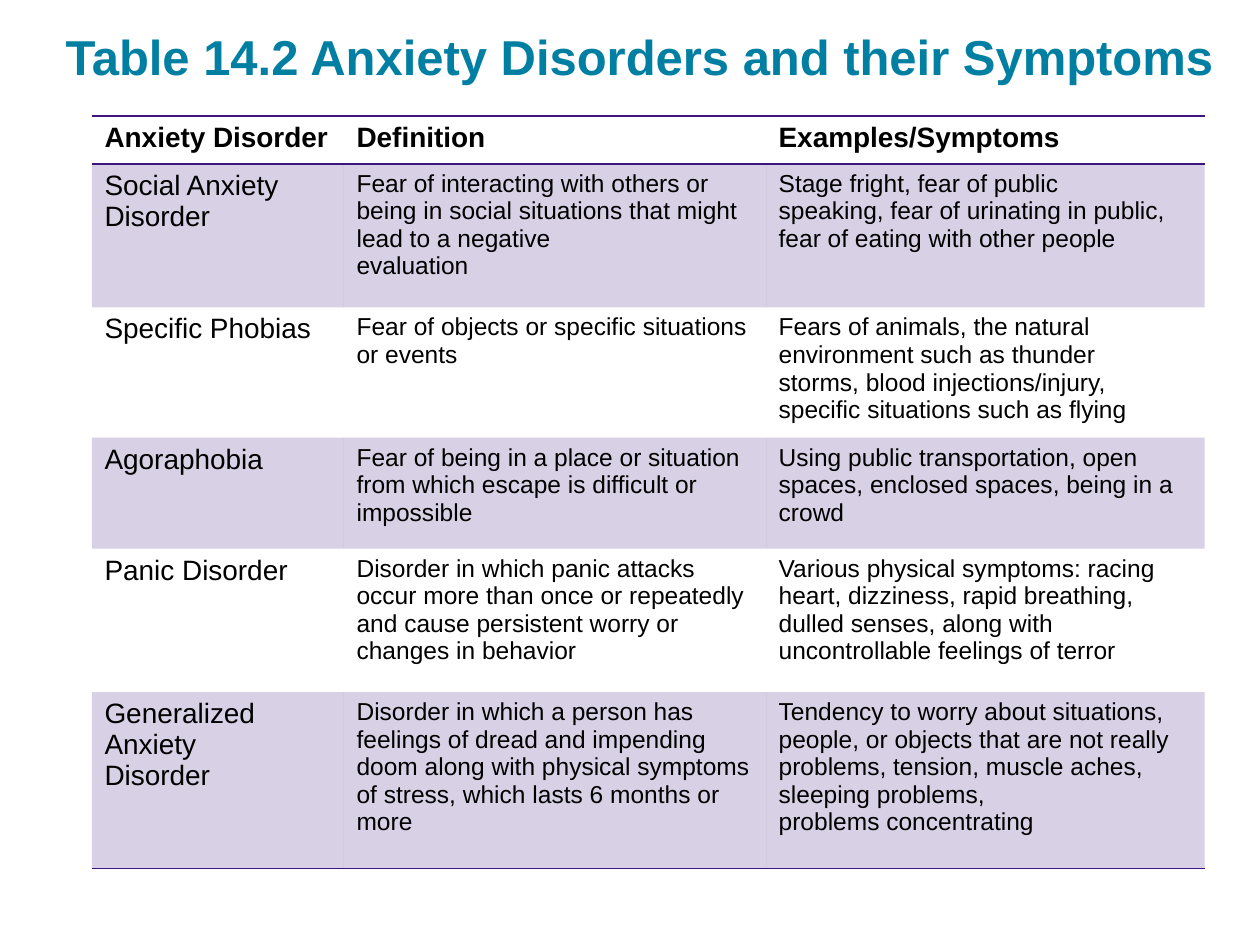
from pptx import Presentation
from pptx.dml.color import RGBColor
from pptx.enum.text import MSO_ANCHOR
from pptx.oxml import parse_xml
from pptx.oxml.ns import nsdecls, qn
from pptx.util import Inches, Pt

FONT = "Arial"
TEAL, PURPLE, BLACK = "007FA3", "3C1581", "000000"
BAND_ALPHA = 20
NO_STYLE = "{2D5ABB26-0587-4C30-8999-92F81FD0307C}"

TITLE = "Table 14.2 Anxiety Disorders and their Symptoms"
COLUMN_WIDTHS = [2, 3.35, 3.48]
ROW_HEIGHTS = [0.38, 1.14, 1.01, 0.88, 1.14, 1.4]
ROWS = [
    ("Anxiety Disorder", "Definition", "Examples/Symptoms"),
    ("Social Anxiety Disorder",
     "Fear of interacting with others or being in social situations that might "
     "lead to a negative\nevaluation",
     "Stage fright, fear of public\nspeaking, fear of urinating in public, "
     "fear of eating with other people"),
    ("Specific Phobias",
     "Fear of objects or specific situations or events",
     "Fears of animals, the natural\nenvironment such as thunder\n"
     "storms, blood injections/injury,\nspecific situations such as flying"),
    ("Agoraphobia",
     "Fear of being in a place or situation from which escape is difficult or impossible",
     "Using public transportation, open spaces, enclosed spaces, being in a crowd"),
    ("Panic Disorder",
     "Disorder in which panic attacks occur more than once or repeatedly and cause "
     "persistent worry or changes in behavior",
     "Various physical symptoms: racing heart, dizziness, rapid breathing, dulled "
     "senses, along with uncontrollable feelings of terror"),
    ("Generalized Anxiety\nDisorder",
     "Disorder in which a person has feelings of dread and impending doom along with "
     "physical symptoms of stress, which lasts 6 months or more",
     "Tendency to worry about situations, people, or objects that are not really "
     "problems, tension, muscle aches, sleeping problems,\nproblems concentrating"),
]


def color(value):
    """Turn a hex string into a colour."""
    return RGBColor.from_string(value)


def write_text(frame, text, size, hex_color, bold=False):
    """Fill a text frame with one paragraph per line of text."""
    frame.text = text
    for paragraph in frame.paragraphs:
        font = paragraph.font
        font.name, font.size, font.bold = FONT, Pt(size), bold
        font.color.rgb = color(hex_color)


def add_title(slide, left, top, width, height):
    """Place the slide title in the given box."""
    frame = slide.shapes.add_textbox(
        Inches(left), Inches(top), Inches(width), Inches(height)).text_frame
    frame.word_wrap = True
    frame.vertical_anchor = MSO_ANCHOR.BOTTOM
    frame.margin_left = frame.margin_right = frame.margin_top = frame.margin_bottom = 0
    write_text(frame, TITLE, 28, TEAL, bold=True)


def shade_cell(cell):
    """Give a cell the translucent band fill."""
    cell.fill.solid()
    cell.fill.fore_color.rgb = color(PURPLE)
    fill_color = cell.fill._xPr.find(qn("a:solidFill")).find(qn("a:srgbClr"))
    fill_color.append(parse_xml(f'<a:alpha {nsdecls("a")} val="{BAND_ALPHA * 1000}"/>'))


def add_borders(cell, sides):
    """Rule the given sides of a cell, listed in schema order."""
    properties = cell._tc.get_or_add_tcPr()
    for index, side in enumerate(sides):
        properties.insert(index, parse_xml(
            f'<a:ln{side} {nsdecls("a")} w="{Pt(1)}"><a:solidFill>'
            f'<a:srgbClr val="{PURPLE}"/></a:solidFill></a:ln{side}>'))


def add_disorder_table(slide, left, top):
    """Place the disorder table with its top left corner at the given point."""
    table_frame = slide.shapes.add_table(
        len(ROWS), len(COLUMN_WIDTHS), Inches(left), Inches(top),
        Inches(sum(COLUMN_WIDTHS)), Inches(sum(ROW_HEIGHTS)))
    table = table_frame.table
    table.horz_banding = False
    table._tbl.tblPr.find(qn("a:tableStyleId")).text = NO_STYLE
    for column, width in zip(table.columns, COLUMN_WIDTHS):
        column.width = Inches(width)
    for row, height in zip(table.rows, ROW_HEIGHTS):
        row.height = Inches(height)
    borders = {0: "TB", len(ROWS) - 1: "B"}
    for row_index, texts in enumerate(ROWS):
        is_header = row_index == 0
        for column_index, text in enumerate(texts):
            cell = table.cell(row_index, column_index)
            size = 16 if is_header or column_index == 0 else 14
            write_text(cell.text_frame, text, size, BLACK, bold=is_header)
            if row_index % 2:
                shade_cell(cell)
            else:
                cell.fill.background()
            add_borders(cell, borders.get(row_index, ""))


def main():
    """Build and save the slide."""
    presentation = Presentation()
    presentation.slide_width, presentation.slide_height = Inches(10), Inches(7.5)
    slide = presentation.slides.add_slide(presentation.slide_layouts[6])
    add_title(slide, 0.52, 0.17, 9.25, 0.51)
    add_disorder_table(slide, 0.73, 0.92)
    presentation.save("out.pptx")


if __name__ == "__main__":
    main()
